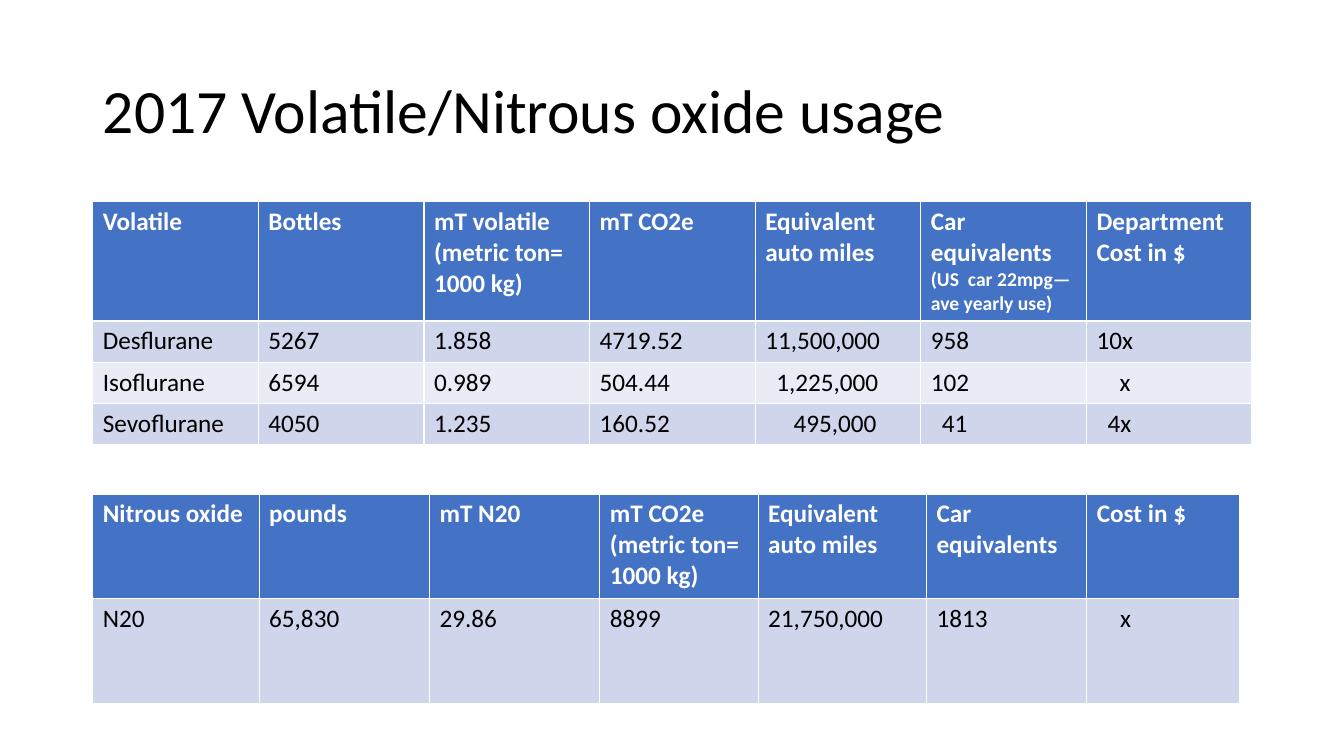
from pptx import Presentation
from pptx.dml.color import RGBColor
from pptx.enum.text import MSO_ANCHOR as Anchor, PP_ALIGN as Align
from pptx.util import Inches, Pt

COLORS = {"ink": "000000", "header": "4472C4", "header_text": "FFFFFF",
          "odd_row": "CFD5EA", "even_row": "E9EBF5"}
FONT = "Calibri"
SLIDE_WIDTH, SLIDE_HEIGHT = 13.33, 7.5
LEFT = 0.92
CELL_MARGIN = 0.1

VOLATILE_ROWS = [
    ["Volatile", "Bottles", "mT volatile\n(metric ton= 1000 kg)", "mT CO2e",
     "Equivalent auto miles", "Car equivalents\n(US  car 22mpg—ave yearly use)",
     "Department Cost in $"],
    ["Desflurane", "5267", "1.858", "4719.52", "11,500,000", "958", "10x"],
    ["Isoflurane", "6594", "0.989", "504.44", "1,225,000", "102", "x"],
    ["Sevoflurane", "4050", "1.235", "160.52", "495,000", "41", "4x"],
]
VOLATILE_INDENTS = {(2, 4): 0.11, (2, 6): 0.23, (3, 4): 0.28, (3, 5): 0.11, (3, 6): 0.11}
CAR_NOTE = "(US  car 22mpg—ave yearly use)"

NITROUS_ROWS = [
    ["Nitrous oxide", "pounds", "mT N20", "mT CO2e\n(metric ton=\n1000 kg)",
     "Equivalent auto miles", "Car equivalents", "Cost in $"],
    ["N20", "65,830", "29.86", "8899", "21,750,000", "1813", "x"],
]
NITROUS_INDENTS = {(1, 6): 0.23}


def add_run(paragraph, words, size, color, bold=False):
    run = paragraph.add_run()
    run.text = words
    run.font.name = FONT
    run.font.size = Pt(size)
    run.font.bold = bold
    run.font.color.rgb = RGBColor.from_string(COLORS[color])


def place_title(slide, box, words):
    title = slide.shapes.title
    title.left, title.top, title.width, title.height = map(Inches, box)
    frame = title.text_frame
    frame.vertical_anchor = Anchor.MIDDLE
    heading = frame.paragraphs[0]
    heading.alignment = Align.LEFT
    heading.line_spacing = 0.9
    add_run(heading, words, 44, "ink")


def fill_cell(cell, words, row, indent):
    is_header = row == 0
    fill_name = "header" if is_header else "odd_row" if row % 2 else "even_row"
    cell.fill.solid()
    cell.fill.fore_color.rgb = RGBColor.from_string(COLORS[fill_name])
    cell.margin_left = Inches(CELL_MARGIN + indent)
    frame = cell.text_frame
    for index, line in enumerate(words.split("\n")):
        paragraph = frame.add_paragraph() if index else frame.paragraphs[0]
        add_run(paragraph, line, 14 if line == CAR_NOTE else 18,
                "header_text" if is_header else "ink", is_header)


def place_usage_table(slide, box, rows, column_widths, row_heights, indents):
    usage = slide.shapes.add_table(len(rows), len(rows[0]), *map(Inches, box)).table
    for column, width in zip(usage.columns, column_widths):
        column.width = Inches(width)
    for table_row, height in zip(usage.rows, row_heights):
        table_row.height = Inches(height)
    for row, entries in enumerate(rows):
        for column, words in enumerate(entries):
            fill_cell(usage.cell(row, column), words, row, indents.get((row, column), 0))


def main():
    deck = Presentation()
    deck.slide_width, deck.slide_height = Inches(SLIDE_WIDTH), Inches(SLIDE_HEIGHT)
    slide = deck.slides.add_slide(deck.slide_layouts[5])
    content_width = 11.5

    place_title(slide, (LEFT, 0.4, content_width, 1.45), "2017 Volatile/Nitrous oxide usage")
    place_usage_table(slide, (LEFT, 2, content_width, 2.38), VOLATILE_ROWS,
                      [content_width / 7] * 7, [1.17] + [0.41] * 3, VOLATILE_INDENTS)
    place_usage_table(slide, (LEFT, 4.9, 11.38, 2.09), NITROUS_ROWS,
                      [1.65, 1.69, 1.69, 1.57, 1.67, 1.59, 1.52], [1.04] * 2, NITROUS_INDENTS)
    deck.save("out.pptx")


if __name__ == "__main__":
    main()
